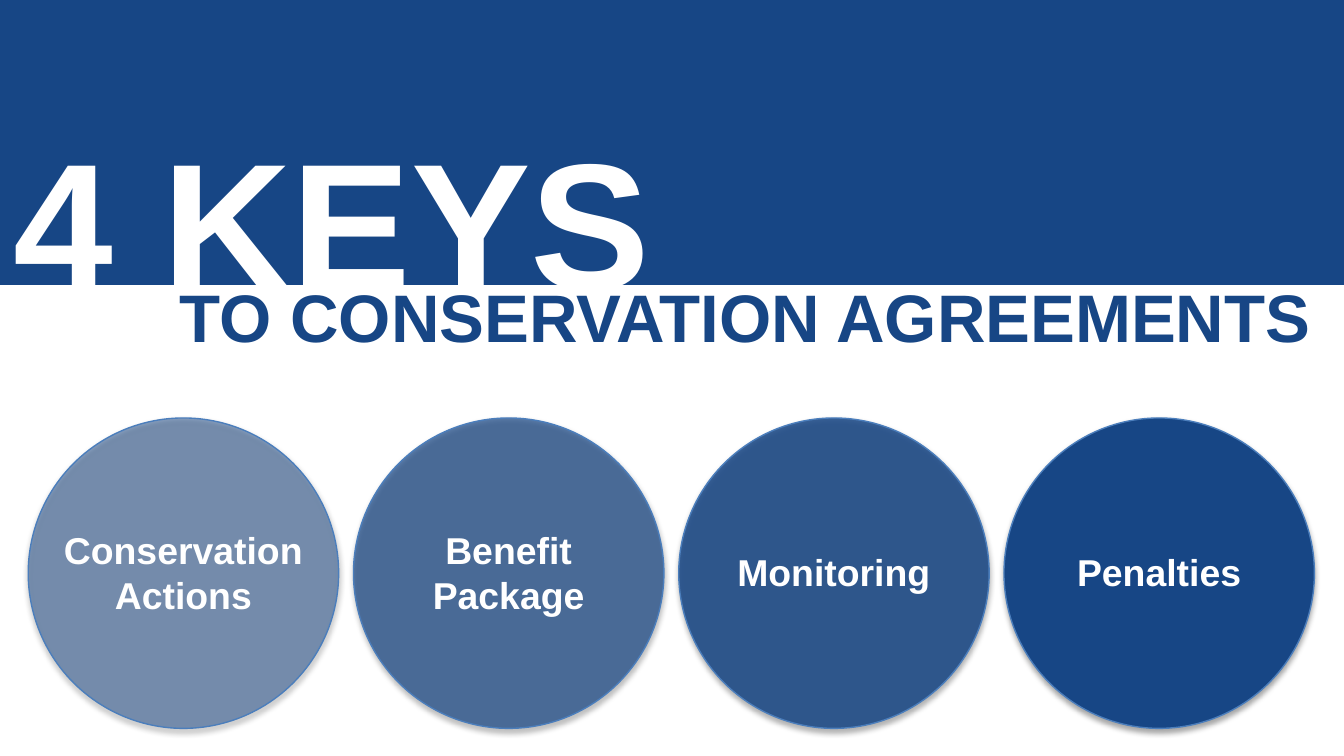
from lxml.etree import SubElement
from pptx import Presentation
from pptx.dml.color import RGBColor
from pptx.enum.shapes import MSO_SHAPE
from pptx.enum.text import MSO_ANCHOR, PP_ALIGN
from pptx.oxml.ns import qn
from pptx.util import Inches, Pt

# Content
TITLE = "4 KEYS"
SUBTITLE = "TO CONSERVATION AGREEMENTS"
KEYS = [  # lines of the label, opacity of the circle in percent
    (["Conservation", "Actions"], 50),
    (["Benefit", "Package"], 70),
    (["Monitoring"], 85),
    (["Penalties"], 100),
]

THEME = {
    "font": "Arial",
    "navy": RGBColor.from_string("174685"),
    "outline": RGBColor.from_string("4B7EBC"),
    "white": RGBColor.from_string("FFFFFF"),
    "title": Pt(96), "subtitle": Pt(36), "label": Pt(20),
}

# Grid
WIDTH = 10
HEIGHT = WIDTH * 9 / 16
BAND_H = 2.12
HEAD_W, HEAD_H = 8.83, 1.27
LEFT, PITCH, DIAMETER, CIRCLE_TOP = 0.21, 2.42, 2.31, 3.11
LABEL_W, LINE_H, LABEL_PAD = 2, 0.33, 0.11
LABEL_MID = 4.26


def add_shape(s, kind, box, color):
    sp = s.shapes.add_shape(kind, *map(Inches, box))
    sp.shadow.inherit = False
    sp.fill.solid()
    sp.fill.fore_color.rgb = color
    sp.line.fill.background()
    return sp


def add_text(s, box, lines, size, color, align=PP_ALIGN.LEFT, inset=0.1):
    tf = s.shapes.add_textbox(*map(Inches, box)).text_frame
    frame = {"word_wrap": True, "vertical_anchor": MSO_ANCHOR.TOP,
             "margin_left": Inches(0.1), "margin_right": Inches(0.1),
             "margin_top": Inches(inset), "margin_bottom": Inches(inset)}
    for name, value in frame.items():
        setattr(tf, name, value)
    for i, line in enumerate(lines):
        p = tf.paragraphs[0] if i == 0 else tf.add_paragraph()
        p.alignment = align
        r = p.add_run()
        r.text = line
        for name, value in {"name": THEME["font"], "size": size, "bold": True}.items():
            setattr(r.font, name, value)
        r.font.color.rgb = color


def set_alpha(color_element, percent):
    SubElement(color_element, qn("a:alpha"), val=str(percent * 1000))


def add_circle(s, box, opacity):
    sp = add_shape(s, MSO_SHAPE.OVAL, box, THEME["navy"])
    sp.line.color.rgb = THEME["outline"]
    sp.line.width = Pt(0.75)
    pr = sp._element.spPr
    if opacity < 100:
        set_alpha(pr.find(qn("a:solidFill")).find(qn("a:srgbClr")), opacity)
    # Soft shadow falling straight down
    shadow = SubElement(pr.find(qn("a:effectLst")), qn("a:outerShdw"),
                        blurRad=str(Pt(3.1)), dist=str(Pt(1.8)),
                        dir=str(90 * 60000), rotWithShape="0")
    set_alpha(SubElement(shadow, qn("a:srgbClr"), val="000000"), 35)


def main():
    prs = Presentation()
    prs.slide_width, prs.slide_height = Inches(WIDTH), Inches(HEIGHT)
    s = prs.slides.add_slide(prs.slide_layouts[6])

    # Heading band and its two lines
    add_shape(s, MSO_SHAPE.RECTANGLE, (0, 0, WIDTH, BAND_H), THEME["navy"])
    add_text(s, (0, 0.72, HEAD_W, HEAD_H), [TITLE], THEME["title"], THEME["white"])
    add_text(s, (1.24, 1.95, HEAD_W, HEAD_H), [SUBTITLE], THEME["subtitle"],
             THEME["navy"])

    # Row of circles, each with a centred label
    for i, (lines, opacity) in enumerate(KEYS):
        x = LEFT + i * PITCH
        add_circle(s, (x, CIRCLE_TOP, DIAMETER, DIAMETER), opacity)
        h = len(lines) * LINE_H + LABEL_PAD
        add_text(s, (x + (DIAMETER - LABEL_W) / 2, LABEL_MID - h / 2, LABEL_W, h),
                 lines, THEME["label"], THEME["white"], PP_ALIGN.CENTER, inset=0.05)

    prs.save("out.pptx")


if __name__ == "__main__":
    main()
